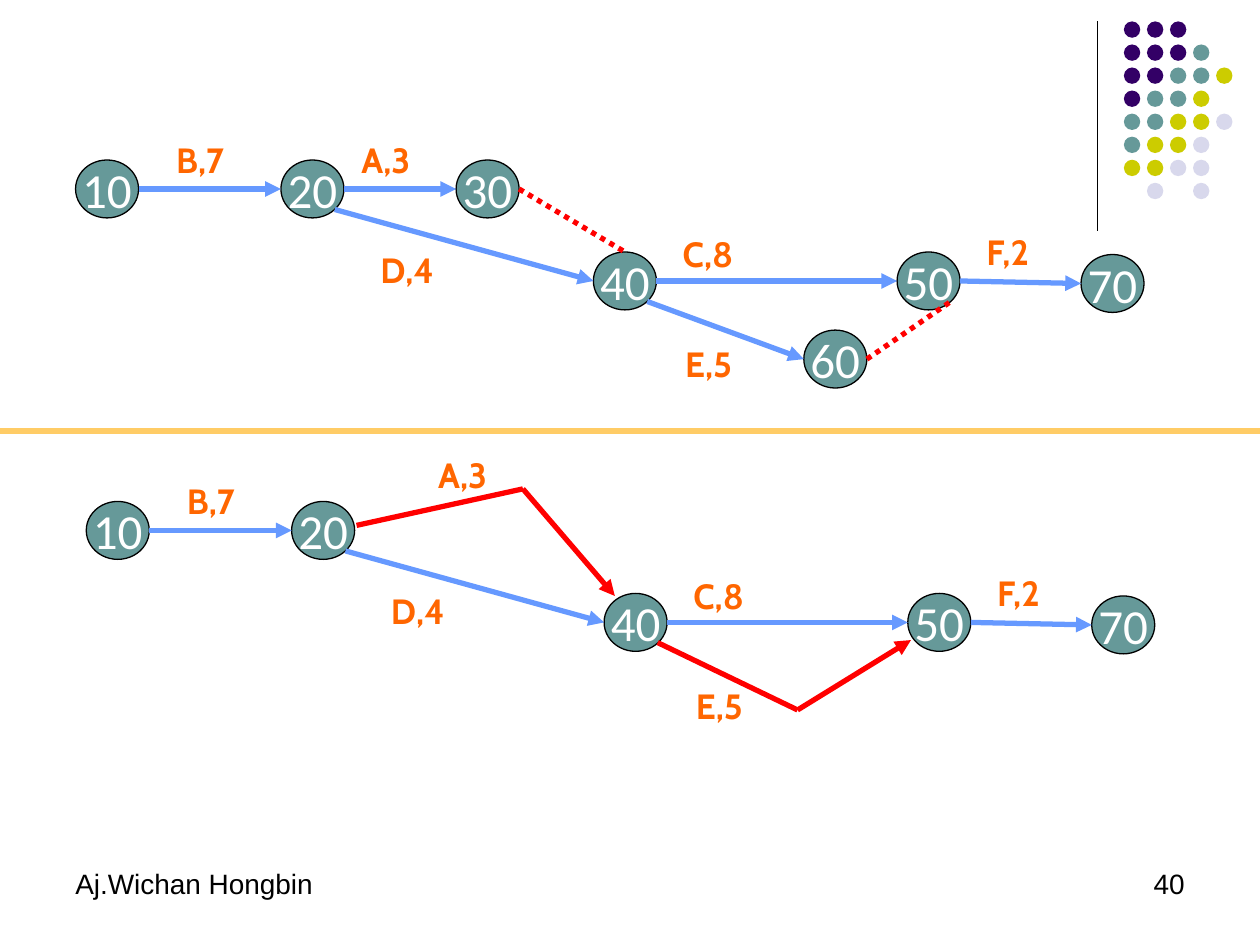
import math

import pptx
import pptx.chart.data
import pptx.dml.color
import pptx.enum.dml
import pptx.enum.shapes
import pptx.enum.text
import pptx.oxml.ns
import pptx.util
from lxml import etree

COLS, ROWS = 100, 75
WIDTH, HEIGHT = pptx.util.Inches(10), pptx.util.Inches(7.5)
TEAL, BLUE, RED, ORANGE = "669999", "6699FF", "FF0000", "FF6600"
BLACK, WHITE, GOLD = "000000", "FFFFFF", "FFCC66"
DOTS = {"p": "330066", "t": TEAL, "y": "CCCC00", "l": "D8D8EC"}
DOT_ROWS = ["ppp", "pppt", "pptty", "ptty", "ttyyl", "tyyl", "yyll", " l l"]
ALIGN = pptx.enum.text.PP_ALIGN
OVAL = pptx.enum.shapes.MSO_SHAPE.OVAL

# Centres of the events and corners of the labels, in cells from the box corner
NODES = {"10": (2.5, 4.5), "20": (18.8, 4.5), "40": (43.6, 11.8),
         "50": (67.7, 11.8), "70": (82.3, 12)}
EXTRA = {"30": (32.7, 4.5), "60": (60.3, 18)}
LABELS = {"B,7": (7, 0), "C,8": (47.2, 7.5), "D,4": (23.2, 8.7),
          "E,5": (47.4, 16.2), "F,2": (71.3, 7.3)}
NODE_W, NODE_H = 5, 4.6
# Angles on a node's rim, clockwise from the right
RIGHT, CORNER, LEFT, TOP = 0, 45, 180, 270
ARROWS = [("10", RIGHT, "20"), ("20", CORNER, "40"),
          ("40", RIGHT, "50"), ("50", RIGHT, "70")]


def color(text):
    return pptx.dml.color.RGBColor.from_string(text)


def col(n):
    return round(WIDTH * n / COLS)


def row(n):
    return round(HEIGHT * n / ROWS)


def line(slide, start, end, tint, width=3, head=False, dots=False):
    link = slide.shapes.add_connector(
        pptx.enum.shapes.MSO_CONNECTOR.STRAIGHT,
        col(start[0]), row(start[1]), col(end[0]), row(end[1]))
    link.line.color.rgb = color(tint)
    link.line.width = pptx.util.Pt(width)
    if dots:
        link.line.dash_style = pptx.enum.dml.MSO_LINE.ROUND_DOT
    if head:
        etree.SubElement(link.line._get_or_add_ln(),
                         pptx.oxml.ns.qn("a:tailEnd"), type="triangle")
    etree.SubElement(link._element.spPr, pptx.oxml.ns.qn("a:effectLst"))


def oval(slide, x, y, w, h, fill):
    shape = slide.shapes.add_shape(OVAL, col(x), row(y), col(w), row(h))
    shape.shadow.inherit = False
    shape.fill.solid()
    shape.fill.fore_color.rgb = color(fill)
    shape.line.fill.background()
    return shape


def write(frame, text, size, font, tint, bold=False, align=ALIGN.LEFT):
    para = frame.paragraphs[0]
    para.alignment = align
    run = para.add_run()
    run.text = text
    run.font.size = pptx.util.Pt(size)
    run.font.name = font
    run.font.bold = bold
    run.font.color.rgb = color(tint)


def node(slide, x, y, text):
    """Draw an event centred on x, y."""
    shape = oval(slide, x - NODE_W / 2, y - NODE_H / 2, NODE_W, NODE_H, TEAL)
    shape.line.color.rgb = color(BLACK)
    shape.line.width = pptx.util.Pt(0.75)
    frame = shape.text_frame
    frame.word_wrap = False
    frame.vertical_anchor = pptx.enum.text.MSO_ANCHOR.MIDDLE
    write(frame, text, 28, "Calibri", WHITE, align=ALIGN.CENTER)


def label(slide, x, y, text):
    box = slide.shapes.add_textbox(col(x), row(y), col(6.6), row(4.3))
    frame = box.text_frame
    frame.word_wrap = False
    frame.auto_size = pptx.enum.text.MSO_AUTO_SIZE.SHAPE_TO_FIT_TEXT
    write(frame, text, 20, "Cabin", ORANGE, bold=True)


def network(slide, left, top, nodes, labels, arrows, dummies=(), bends=()):
    """Draw events, activities, dotted dummies and bent red activities."""
    def place(point):
        return left + point[0], top + point[1]

    def rim(name, angle):
        x, y = place(nodes[name])
        turn = math.radians(angle)
        return (x + NODE_W / 2 * math.cos(turn),
                y + NODE_H / 2 * math.sin(turn))

    for name, point in nodes.items():
        node(slide, *place(point), name)
    for begin, angle, end in arrows:
        line(slide, rim(begin, angle), rim(end, LEFT), BLUE, head=True)
    for begin, end, angle in dummies:
        line(slide, rim(begin, RIGHT), rim(end, angle), RED, dots=True)
    for start, turn, end in bends:
        line(slide, place(start), place(turn), RED)
        line(slide, place(turn), place(end), RED, head=True)
    for text, point in labels.items():
        label(slide, *place(point), text)


def corner(slide, left, top):
    """Draw the rule and the dot pattern beside it."""
    line(slide, (left, top), (left, top + 16.6), BLACK, 0.75)
    pitch, size = 1.83, 1.3
    for j, marks in enumerate(DOT_ROWS):
        for i, mark in enumerate(marks):
            if mark in DOTS:
                oval(slide, left + 2.1 + i * pitch, top + j * pitch,
                     size, size, DOTS[mark])


def footer(slide, left, top, width):
    part = 23.3
    for x, text, align in [(left, "Aj.Wichan Hongbin", ALIGN.LEFT),
                           (left + width - part, "40", ALIGN.RIGHT)]:
        box = slide.shapes.add_textbox(col(x), row(top), col(part), row(5))
        box.text_frame.word_wrap = True
        write(box.text_frame, text, 16, "Arial", BLACK, align=align)


def main():
    deck = pptx.Presentation()
    deck.slide_width, deck.slide_height = WIDTH, HEIGHT
    slide = deck.slides.add_slide(deck.slide_layouts[6])
    corner(slide, 87.1, 1.7)
    footer(slide, 5, 68.3, 90)
    network(slide, 6, 10.5, NODES | EXTRA, LABELS | {"A,3": (21.7, 0)},
            ARROWS + [("20", RIGHT, "30"), ("40", CORNER, "60")],
            dummies=[("30", "40", TOP), ("60", "50", CORNER)])
    network(slide, 6.85, 37.6, NODES, LABELS | {"A,3": (26.95, -2.1)}, ARROWS,
            bends=[((21.45, 4.1), (34.65, 1.2), (41.95, 9.7)),
                   ((45.35, 13.4), (56.45, 18.75), (65.45, 13.2))])
    line(slide, (0, 34.2), (COLS, 34.2), GOLD)
    deck.save("out.pptx")


if __name__ == "__main__":
    main()
